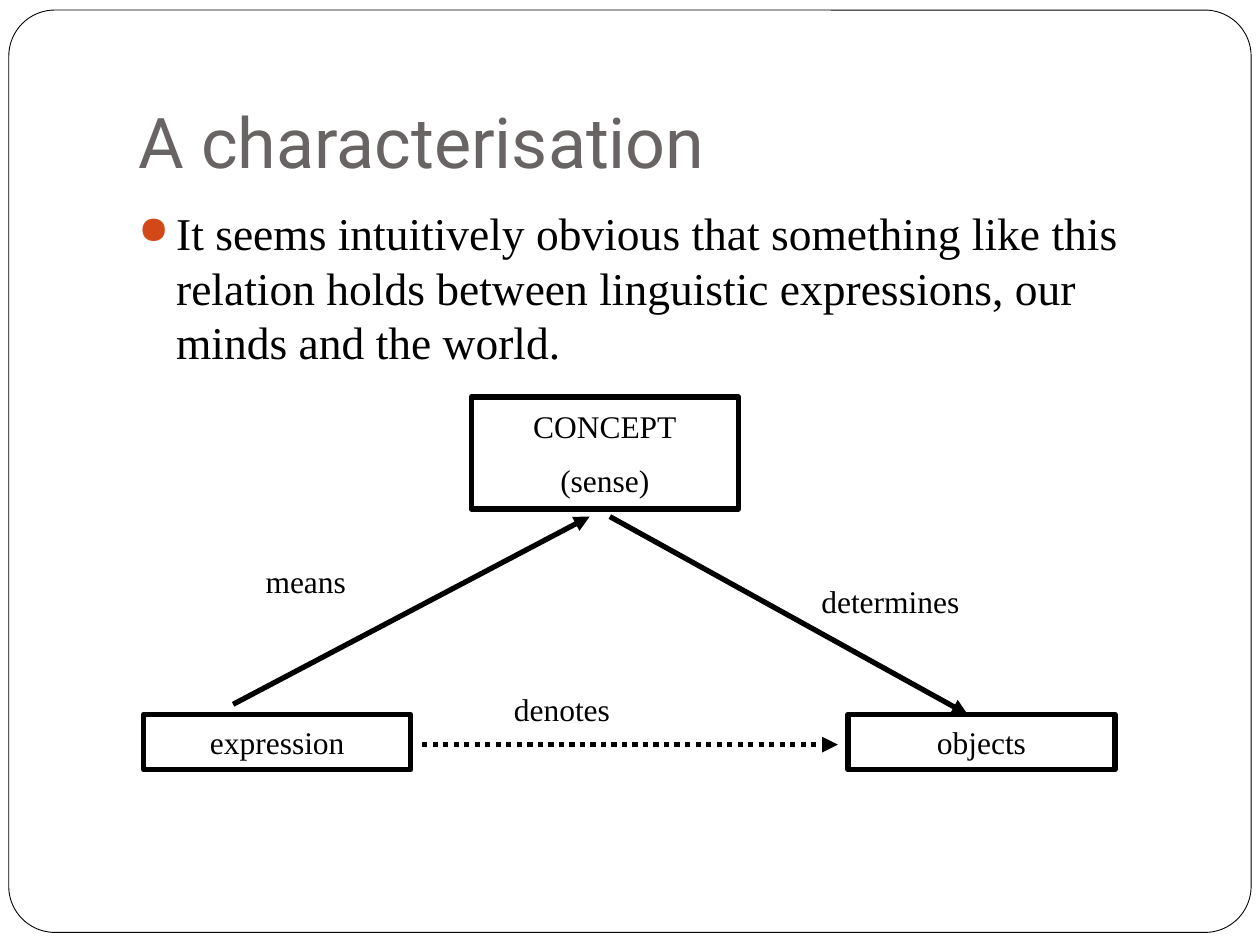
from dataclasses import dataclass

from lxml import etree
from pptx import Presentation
from pptx.dml.color import RGBColor
from pptx.enum.dml import MSO_LINE
from pptx.enum.shapes import MSO_CONNECTOR, MSO_SHAPE
from pptx.enum.text import MSO_ANCHOR, PP_ALIGN
from pptx.oxml.ns import qn
from pptx.util import Inches, Pt

RECTANGLE = MSO_SHAPE.RECTANGLE
ROUNDED = MSO_SHAPE.ROUNDED_RECTANGLE
STRAIGHT = MSO_CONNECTOR.STRAIGHT
DOTTED = MSO_LINE.ROUND_DOT
TOP, MIDDLE, BOTTOM = MSO_ANCHOR.TOP, MSO_ANCHOR.MIDDLE, MSO_ANCHOR.BOTTOM
LEFT, CENTER = PP_ALIGN.LEFT, PP_ALIGN.CENTER

BLACK, WHITE, GREY, ORANGE = "000000", "FFFFFF", "696464", "D34817"
SERIF, SANS = "Times New Roman", "Roboto"
BOX_WIDTH = 2.12
LABEL_HEIGHT = 0.4


@dataclass(frozen=True)
class TextStyle:
    size: float = 18
    font: str = SERIF
    color: str = BLACK
    align: PP_ALIGN = LEFT
    anchor: MSO_ANCHOR = TOP
    wrap: bool = True
    bottom_margin: float = 0.05


@dataclass(frozen=True)
class Node:
    left: float
    top: float
    height: float
    lines: tuple[str, ...]


@dataclass(frozen=True)
class Label:
    left: float
    top: float
    width: float
    text: str


@dataclass(frozen=True)
class Arrow:
    start: tuple[float, float]
    end: tuple[float, float]
    dotted: bool = False


TITLE_STYLE = TextStyle(40, SANS, GREY, anchor=BOTTOM, bottom_margin=0.1)
BODY_STYLE = TextStyle(26)
NODE_STYLE = TextStyle(align=CENTER, anchor=MIDDLE)
LABEL_STYLE = TextStyle(wrap=False)

NODES = (
    Node(3.74, 3.15, 0.89, ("CONCEPT", "(sense)")),
    Node(1.14, 5.67, 0.44, ("expression",)),
    Node(6.73, 5.67, 0.44, ("objects",)),
)
ARROWS = (
    Arrow((1.85, 5.59), (4.68, 4.1)),
    Arrow((4.84, 4.1), (7.68, 5.67)),
    Arrow((3.35, 5.91), (6.65, 5.91), dotted=True),
)
LABELS = (
    Label(2.01, 4.41, 1.03, "means"),
    Label(6.42, 4.57, 1.61, "determines"),
    Label(3.98, 5.43, 1.19, "denotes"),
)


def rgb(color: str) -> RGBColor:
    return RGBColor.from_string(color)


def write_text(shape, lines: tuple[str, ...], style: TextStyle) -> None:
    frame = shape.text_frame
    frame_format = {
        "word_wrap": style.wrap,
        "vertical_anchor": style.anchor,
        "margin_left": Inches(0.1),
        "margin_right": Inches(0.1),
        "margin_top": Inches(0.05),
        "margin_bottom": Inches(style.bottom_margin),
    }
    for name, value in frame_format.items():
        setattr(frame, name, value)
    for index, line in enumerate(lines):
        paragraph = frame.add_paragraph() if index else frame.paragraphs[0]
        paragraph.alignment = style.align
        if index:
            paragraph.space_before = Pt(style.size / 2)
        run = paragraph.add_run()
        run.text = line
        for name, value in {"size": Pt(style.size), "name": style.font}.items():
            setattr(run.font, name, value)
        run.font.color.rgb = rgb(style.color)


def add_text(slide, label: Label, height: float, style: TextStyle):
    shape = slide.shapes.add_textbox(
        Inches(label.left), Inches(label.top), Inches(label.width), Inches(height)
    )
    write_text(shape, (label.text,), style)
    return shape


def add_bullet(paragraph) -> None:
    paragraph.space_before = Pt(5.8)
    properties = paragraph._p.get_or_add_pPr()
    properties.set("marL", str(Inches(0.3)))
    properties.set("indent", str(Inches(-0.3)))
    color = etree.SubElement(properties, qn("a:buClr"))
    etree.SubElement(color, qn("a:srgbClr"), val=ORANGE)
    etree.SubElement(properties, qn("a:buSzPct"), val="85000")
    etree.SubElement(properties, qn("a:buChar"), char="●")


def add_frame(slide) -> None:
    shape = slide.shapes.add_shape(
        ROUNDED, Inches(0.07), Inches(0.08), Inches(9.86), Inches(7.32)
    )
    shape.adjustments[0] = 0.05
    shape.shadow.inherit = False
    shape.fill.solid()
    shape.fill.fore_color.rgb = rgb(WHITE)
    shape.line.color.rgb = rgb(BLACK)
    shape.line.width = Pt(0.5)


def add_node(slide, node: Node) -> None:
    shape = slide.shapes.add_shape(
        RECTANGLE, Inches(node.left), Inches(node.top),
        Inches(BOX_WIDTH), Inches(node.height),
    )
    shape.shadow.inherit = False
    shape.fill.background()
    shape.line.color.rgb = rgb(BLACK)
    shape.line.width = Pt(3)
    write_text(shape, node.lines, NODE_STYLE)


def add_arrow(slide, arrow: Arrow) -> None:
    points = [Inches(value) for value in (*arrow.start, *arrow.end)]
    connector = slide.shapes.add_connector(STRAIGHT, *points)
    connector.line.color.rgb = rgb(BLACK)
    connector.line.width = Pt(3)
    if arrow.dotted:
        connector.line.dash_style = DOTTED
    etree.SubElement(connector.line._get_or_add_ln(), qn("a:tailEnd"), type="triangle")
    etree.SubElement(connector._element.spPr, qn("a:effectLst"))


def main() -> None:
    presentation = Presentation()
    presentation.slide_width = Inches(10)
    presentation.slide_height = Inches(7.5)
    slide = presentation.slides.add_slide(presentation.slide_layouts[6])

    # Frame, title and statement
    add_frame(slide)
    add_text(slide, Label(1, 0.3, 8.5, "A characterisation"), 1.25, TITLE_STYLE)
    statement = (
        "It seems intuitively obvious that something like this relation holds "
        "between linguistic expressions, our minds and the world."
    )
    body = add_text(slide, Label(1, 1.58, 8.5, statement), 1.54, BODY_STYLE)
    add_bullet(body.text_frame.paragraphs[0])

    # Triangle of meaning
    for node in NODES:
        add_node(slide, node)
    for arrow in ARROWS:
        add_arrow(slide, arrow)
    for label in LABELS:
        add_text(slide, label, LABEL_HEIGHT, LABEL_STYLE)

    presentation.save("out.pptx")


if __name__ == "__main__":
    main()
